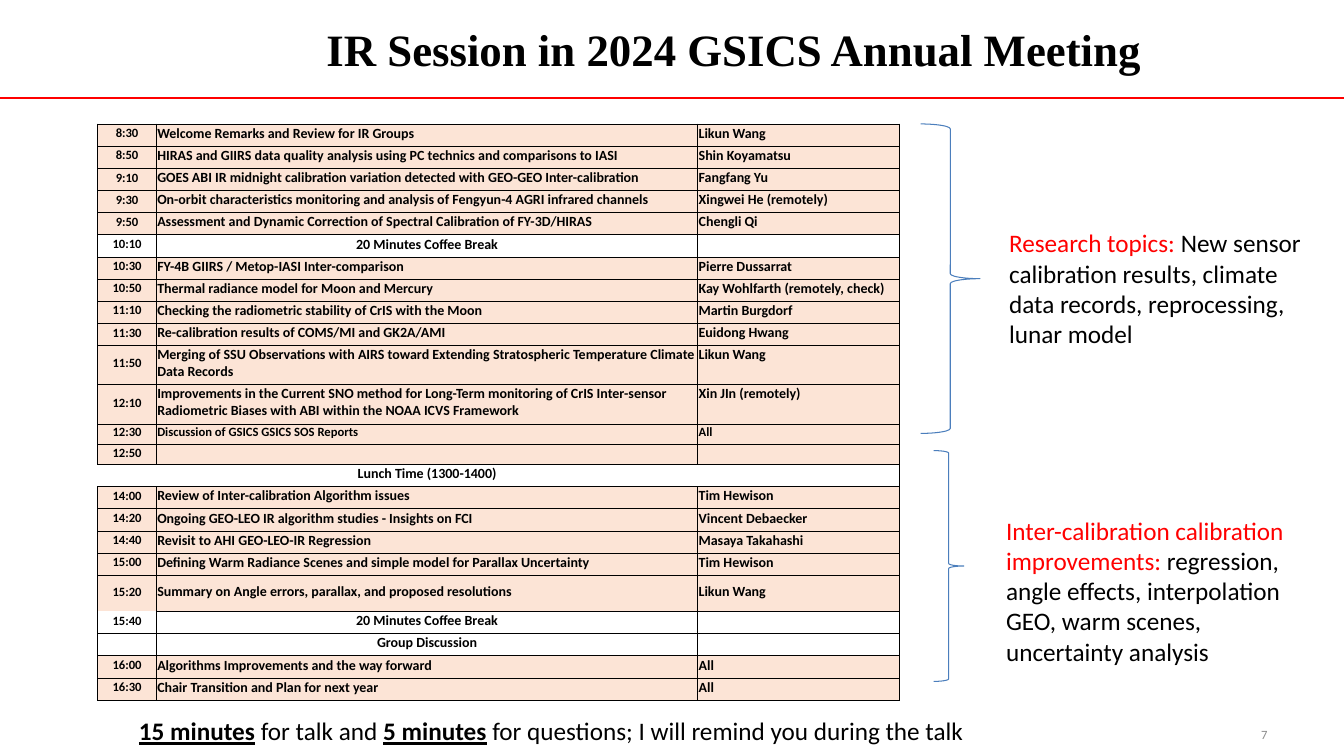
from lxml.etree import SubElement
from pptx import Presentation
from pptx.dml.color import RGBColor
from pptx.enum.shapes import MSO_CONNECTOR, MSO_SHAPE
from pptx.enum.text import MSO_ANCHOR as ANCHOR, PP_ALIGN as ALIGN
from pptx.oxml.ns import qn
from pptx.util import Inches, Pt

COLORS = {"red": "FF0000", "black": "000000", "gray": "8C8C8C",
          "peach": "FCE4D6", "white": "FFFFFF", "brace": "4B7EBC"}
COLUMNS = (0.58, 5.37, 2)
ROW_HEIGHT = 0.22
SPECIAL_HEIGHTS = {"11:50": 0.39, "12:10": 0.39, "12:30": 0.2, "12:50": 0.2, "15:20": 0.36}
COFFEE, LUNCH, GROUP = "20 Minutes Coffee Break", "Lunch Time (1300-1400)", "Group Discussion"
AGENDA = [
    ("8:30", "Welcome Remarks and Review for IR Groups", "Likun Wang"),
    ("8:50", "HIRAS and GIIRS data quality analysis using PC technics and comparisons to IASI",
     "Shin Koyamatsu"),
    ("9:10", "GOES ABI IR midnight calibration variation detected with GEO-GEO Inter-calibration",
     "Fangfang Yu"),
    ("9:30", "On-orbit characteristics monitoring and analysis of Fengyun-4 AGRI infrared channels",
     "Xingwei He (remotely)"),
    ("9:50", "Assessment and Dynamic Correction of Spectral Calibration of FY-3D/HIRAS",
     "Chengli Qi"),
    ("10:10", COFFEE, ""),
    ("10:30", "FY-4B GIIRS / Metop-IASI Inter-comparison", "Pierre Dussarrat"),
    ("10:50", "Thermal radiance model for Moon and Mercury", "Kay Wohlfarth (remotely, check)"),
    ("11:10", "Checking the radiometric stability of CrIS with the Moon", "Martin Burgdorf"),
    ("11:30", "Re-calibration results of COMS/MI and GK2A/AMI", "Euidong Hwang"),
    ("11:50", "Merging of SSU Observations with AIRS toward Extending Stratospheric "
     "Temperature Climate Data Records", "Likun Wang"),
    ("12:10", "Improvements in the Current SNO method for Long-Term monitoring of CrIS "
     "Inter-sensor Radiometric Biases with ABI within the NOAA ICVS Framework",
     "Xin JIn (remotely)"),
    ("12:30", "Discussion of GSICS GSICS SOS Reports", "All"),
    ("12:50", "", ""),
    ("", LUNCH, ""),
    ("14:00", "Review of Inter-calibration Algorithm issues", "Tim Hewison"),
    ("14:20", "Ongoing GEO-LEO IR algorithm studies - Insights on FCI", "Vincent Debaecker"),
    ("14:40", "Revisit to AHI GEO-LEO-IR Regression", "Masaya Takahashi"),
    ("15:00", "Defining Warm Radiance Scenes and simple model for Parallax Uncertainty",
     "Tim Hewison"),
    ("15:20", "Summary on Angle errors, parallax, and proposed resolutions", "Likun Wang"),
    ("15:40", COFFEE, ""),
    ("", GROUP, ""),
    ("16:00", "Algorithms Improvements and the way forward", "All"),
    ("16:30", "Chair Transition and Plan for next year", "All"),
]


def rgb(name):
    """Return the named colour."""
    return RGBColor.from_string(COLORS[name])


def add_run(p, text, size, color="black", bold=False, underline=False, font="Calibri"):
    """Append one formatted run to a paragraph."""
    r = p.add_run()
    r.text = text
    r.font.name, r.font.size = font, Pt(size)
    r.font.bold, r.font.underline = bold, underline
    r.font.color.rgb = rgb(color)


def add_text(s, box, runs, align=ALIGN.LEFT, anchor=ANCHOR.TOP):
    """Place a wrapped text box holding one paragraph of runs."""
    tf = s.shapes.add_textbox(*map(Inches, box)).text_frame
    tf.word_wrap = True
    tf.vertical_anchor = anchor
    p = tf.paragraphs[0]
    p.alignment = align
    for text, style in runs:
        add_run(p, text, **style)


def add_header(s, box):
    """Place the title and the full-width rule beneath it."""
    left, top, width, height = box
    line = s.shapes.add_connector(MSO_CONNECTOR.STRAIGHT, 0, Inches(top + height),
                                  Inches(13.33), Inches(top + height))
    line.line.color.rgb = rgb("red")
    line.line.width = Pt(1.25)
    SubElement(line._element.spPr, qn("a:effectLst"))
    title = dict(size=32, bold=True, font="Times New Roman")
    add_text(s, box, [("IR Session in 2024 GSICS Annual Meeting", title)],
             ALIGN.CENTER, ANCHOR.MIDDLE)


def set_borders(cell, hidden):
    """Draw thin black cell borders except on the hidden sides."""
    tc_pr = cell._tc.get_or_add_tcPr()
    for i, side in enumerate("LRTB"):
        ln = tc_pr.makeelement(qn(f"a:ln{side}"), {"w": str(Pt(0.5))})
        if side in hidden:
            SubElement(ln, qn("a:noFill"))
        else:
            fill = SubElement(ln, qn("a:solidFill"))
            SubElement(fill, qn("a:srgbClr"), val=COLORS["black"])
        tc_pr.insert(i, ln)


def fill_cell(cell, text, size, align, anchor, fill, hidden):
    """Write and format one agenda cell."""
    cell.margin_left = cell.margin_right = cell.margin_top = Inches(0.01)
    cell.margin_bottom = Inches(0.04)
    cell.vertical_anchor = anchor
    p = cell.text_frame.paragraphs[0]
    p.alignment = align
    if text:
        add_run(p, text, size, bold=True)
    else:
        SubElement(p._p, qn("a:endParaRPr"), sz=str(size * 100))
    if fill:
        cell.fill.solid()
        cell.fill.fore_color.rgb = rgb(fill)
    else:
        cell.fill.background()
    set_borders(cell, hidden)


def hidden_sides(time, topic, col):
    """Name the sides of an agenda cell that carry no border."""
    if topic == LUNCH:
        return ("LR", "LR", "L")[col]
    if col == 0:
        return {"15:20": "B", "15:40": "T"}.get(time, "")
    return ""


def add_agenda(s, box):
    """Place the agenda table."""
    table = s.shapes.add_table(len(AGENDA), len(COLUMNS), *map(Inches, box)).table
    table.first_row = table.horz_banding = False
    for col, width in enumerate(COLUMNS):
        table.columns[col].width = Inches(width)
    for row, entry in enumerate(AGENDA):
        time, topic, _ = entry
        table.rows[row].height = Inches(SPECIAL_HEIGHTS.get(time, ROW_HEIGHT))
        is_break = topic in (COFFEE, LUNCH, GROUP)
        fill = "white" if topic == LUNCH else None if is_break else "peach"
        for col, text in enumerate(entry):
            size = 9 if col == 0 or time in ("12:30", "12:50") else 10
            centred = col == 0 or is_break
            tall = col > 0 and time in ("11:50", "12:10")
            fill_cell(table.cell(row, col), text, size,
                      ALIGN.CENTER if centred else ALIGN.LEFT,
                      ANCHOR.TOP if tall else ANCHOR.MIDDLE,
                      fill, hidden_sides(time, topic, col))


def add_theme(s, brace_box, text_box, heading, detail):
    """Place a brace and the theme it gathers."""
    sp = s.shapes.add_shape(MSO_SHAPE.RIGHT_BRACE, *map(Inches, brace_box))
    sp.shadow.inherit = False
    sp.fill.background()
    sp.line.color.rgb = rgb("brace")
    sp.line.width = Pt(0.75)
    add_text(s, text_box, [(heading, dict(size=18, color="red")), (detail, dict(size=18))])


def add_footer(s, note_box, number_box):
    """Place the timing note and the slide number."""
    plain = dict(size=18)
    strong = dict(size=18, bold=True, underline=True)
    add_text(s, note_box, [("15 minutes", strong), (" for talk and ", plain),
                           ("5 minutes", strong),
                           (" for questions; I will remind you during the talk", plain)])
    add_text(s, number_box, [("7", dict(size=9, color="gray"))], ALIGN.RIGHT, ANCHOR.MIDDLE)


def main():
    """Build and save the slide."""
    prs = Presentation()
    prs.slide_width, prs.slide_height = Inches(13.33), Inches(7.5)
    s = prs.slides.add_slide(prs.slide_layouts[6])
    add_header(s, (1.9, 0, 10.76, 0.97))
    add_footer(s, (1.28, 7.05, 8.7, 0.4), (9.56, 7.09, 3.11, 0.4))
    add_agenda(s, (0.97, 1.23, 7.95, 5.72))
    add_theme(s, (9.13, 1.23, 0.59, 3.07), (9.91, 2.21, 3.11, 1.31), "Research topics:",
              " New sensor calibration results, climate data records, reprocessing, lunar model")
    add_theme(s, (9.26, 4.47, 0.3, 2.29), (9.88, 5.06, 3.11, 1.62),
              "Inter-calibration calibration improvements: ",
              "regression, angle effects, interpolation GEO, warm scenes, uncertainty analysis")
    prs.save("out.pptx")


if __name__ == "__main__":
    main()
